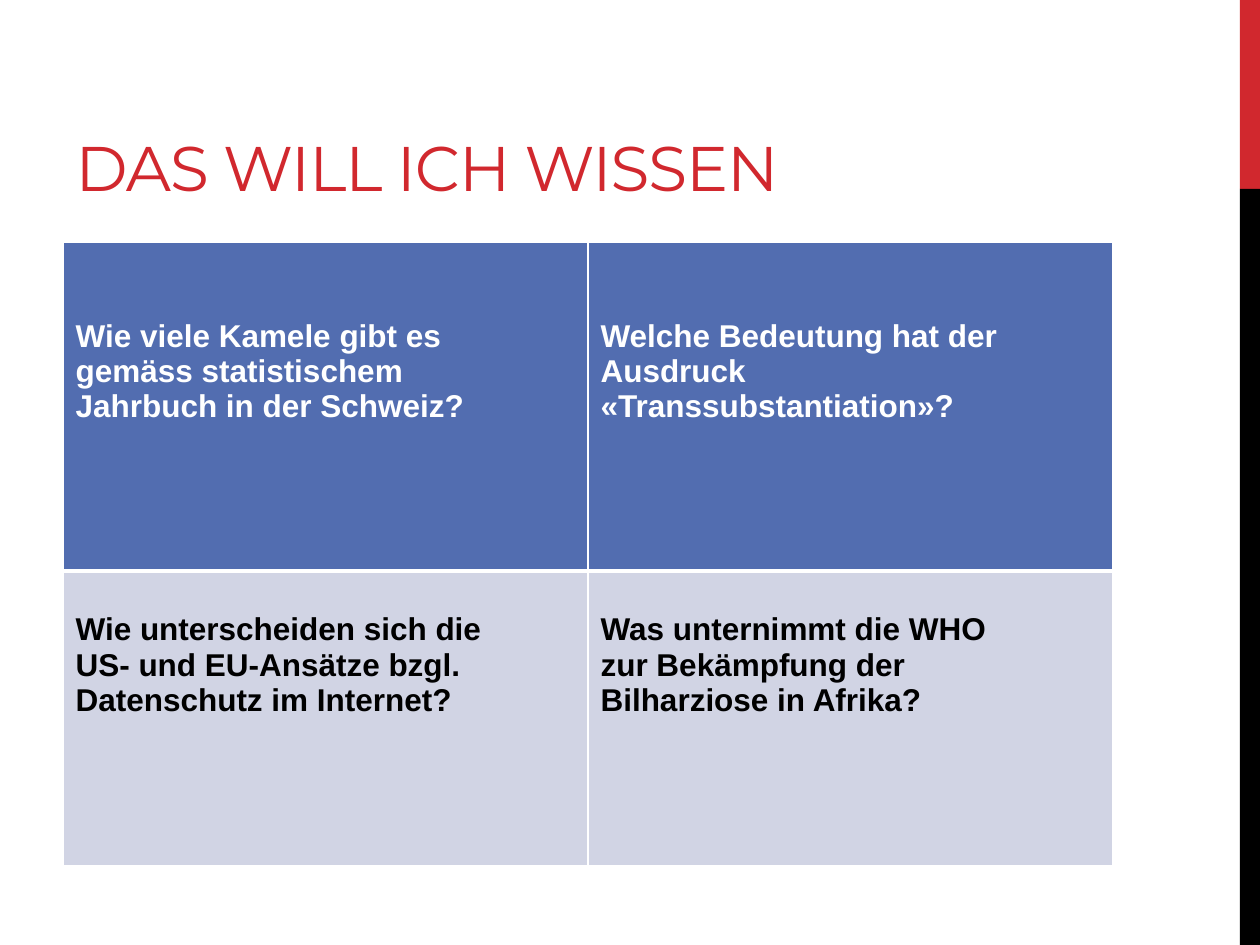
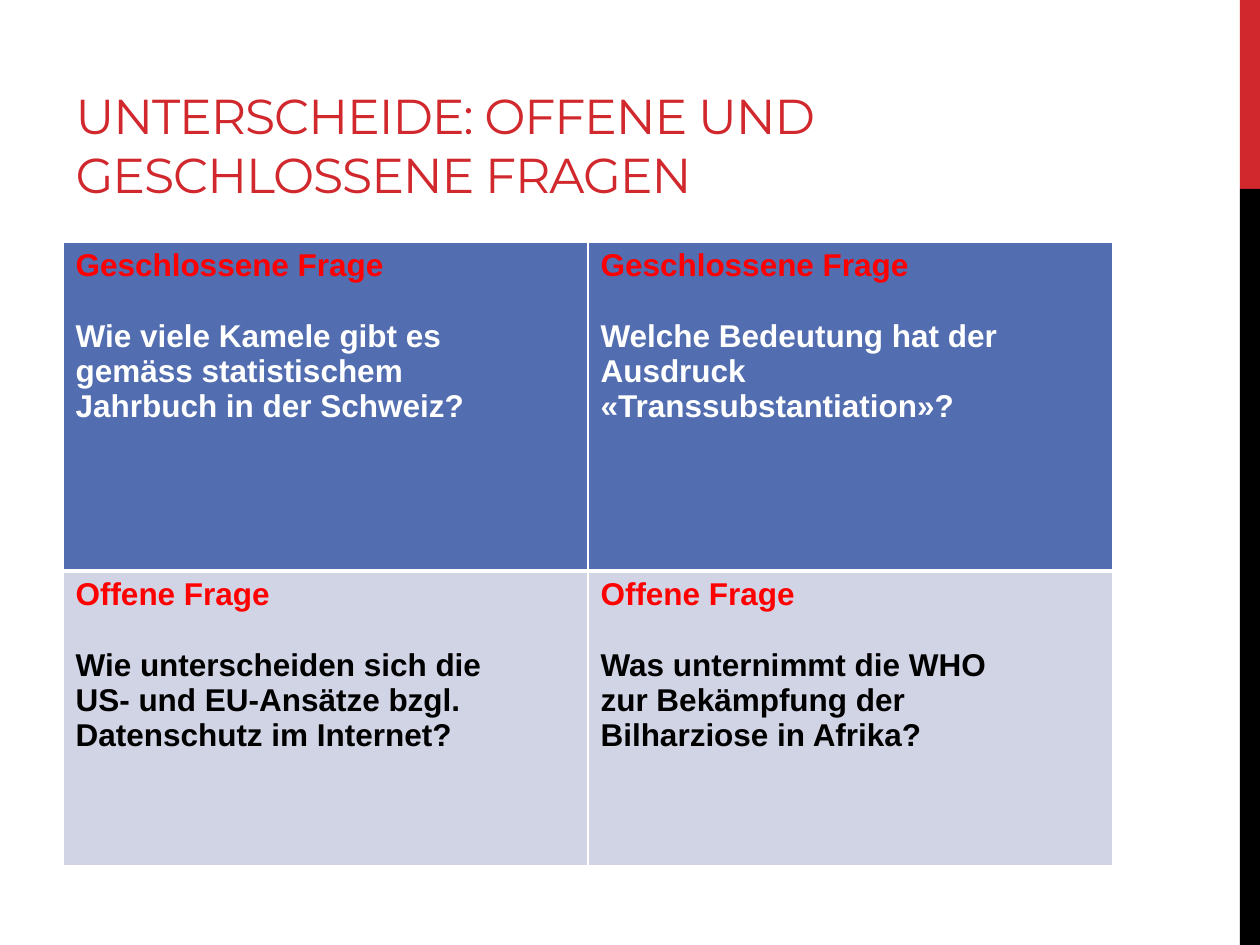
from pptx import Presentation
from pptx.dml.color import RGBColor as Rgb
from pptx.enum.shapes import MSO_SHAPE as Shape
from pptx.enum.text import MSO_ANCHOR as Anchor, MSO_AUTO_SIZE as Fit, PP_ALIGN as Align
from pptx.oxml.ns import qn
from pptx.util import Pt
from lxml.etree import SubElement as Sub

HUES = {"accent": "D1282E", "black": "000000", "white": "FFFFFF",
        "head": "526DB0", "body": "D1D4E4", "label": "FF0000"}
WIDE, HIGH = 720, 540
BAR_X, BAR_CUT = 708.5, 108
ROWS = [188, 168.5]
COL = 300
LINE = 20.1   # height of one line of cell text
INSET = 3.6

ASKS = [
    [["Wie viele Kamele gibt es", "gemäss statistischem", "Jahrbuch in der Schweiz?"],
     ["Welche Bedeutung hat der Ausdruck «Transsubstantiation»?"]],
    [["Wie unterscheiden sich die", "US- und EU-Ansätze bzgl.", "Datenschutz im Internet?"],
     ["Was unternimmt die WHO", "zur Bekämpfung der", "Bilharziose in Afrika?"]],
]
KINDS = ["Geschlossene Frage", "Offene Frage"]


def hue(name):
    return Rgb.from_string(HUES[name])


def style(run, font, size, color, bold=False):
    run.font.name = font
    run.font.size = Pt(size)
    run.font.bold = bold
    run.font.color.rgb = hue(color)


def add_bar(slide, top, height, color):
    bar = slide.shapes.add_shape(Shape.RECTANGLE, Pt(BAR_X), Pt(top),
                                 Pt(WIDE - BAR_X), Pt(height))
    bar.shadow.inherit = False
    bar.fill.solid()
    bar.fill.fore_color.rgb = hue(color)
    bar.line.fill.background()


def set_title(slide, text, size):
    title = slide.shapes.title
    title.left, title.top, title.width, title.height = Pt(36), Pt(12), Pt(456), Pt(108)
    frame = title.text_frame
    frame.text = text
    frame.word_wrap = True
    frame.auto_size = Fit.NONE
    frame.vertical_anchor = Anchor.BOTTOM
    para = frame.paragraphs[0]
    para.alignment = Align.LEFT
    run = para.runs[0]
    style(run, "Montserrat", size, "accent")
    run.font._element.set("spc", "-60")


def add_edge(cell, side, width):
    edge = Sub(cell._tc.get_or_add_tcPr(), qn(f"a:ln{side}"), w=str(Pt(width)))
    fill = Sub(edge, qn("a:solidFill"))
    Sub(fill, qn("a:srgbClr"), val=HUES["white"])


def fill_cell(cell, lines, row, label):
    # The rule between the two rows is the thick one
    widths = {"L": 1, "R": 1, "T": 3 if row else 1, "B": 1 if row else 3}
    for side, width in widths.items():
        add_edge(cell, side, width)
    cell.fill.solid()
    cell.fill.fore_color.rgb = hue("body" if row else "head")

    # Without a label the question starts lower in the cell
    cell.margin_top = Pt(INSET if label else INSET + LINE * (2 - row))
    frame = cell.text_frame
    frame.text = "\n".join([label] * bool(label) + lines)
    for para in frame.paragraphs:
        style(para.runs[0], "Arial", 18, "black" if row else "white", True)
    if label:
        first = frame.paragraphs[0]
        first.space_after = Pt(LINE)
        first.runs[0].font.color.rgb = hue("label")


def add_grid(slide, labels):
    table = slide.shapes.add_table(2, 2, Pt(36), Pt(138.2),
                                   Pt(2 * COL), Pt(sum(ROWS))).table
    for row, height in enumerate(ROWS):
        table.rows[row].height = Pt(height)
        for col in range(2):
            table.columns[col].width = Pt(COL)
            fill_cell(table.cell(row, col), ASKS[row][col], row, labels[row])


def add_page(deck, title, size, labels):
    slide = deck.slides.add_slide(deck.slide_layouts[5])
    add_bar(slide, 0, BAR_CUT, "accent")
    add_bar(slide, BAR_CUT, HIGH - BAR_CUT, "black")
    set_title(slide, title, size)
    add_grid(slide, labels)


def main():
    deck = Presentation()
    deck.slide_width, deck.slide_height = Pt(WIDE), Pt(HIGH)
    add_page(deck, "DAS WILL ICH WISSEN", 36, ["", ""])
    add_page(deck, "UNTERSCHEIDE: OFFENE UND GESCHLOSSENE FRAGEN", 28, KINDS)
    deck.save("out.pptx")


if __name__ == "__main__":
    main()
